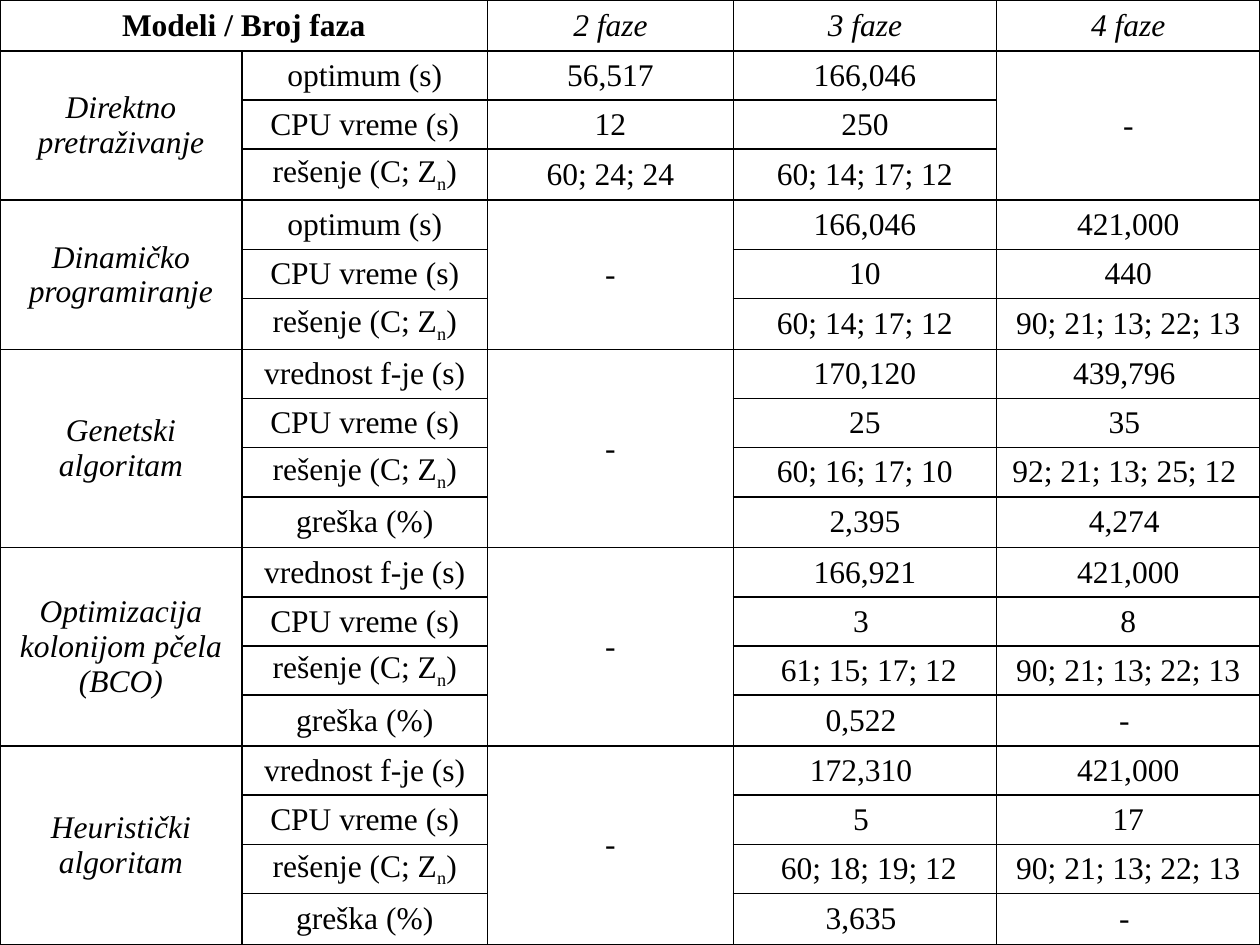
from dataclasses import dataclass

from lxml.etree import SubElement
from pptx import Presentation
from pptx.dml.color import RGBColor
from pptx.enum.text import MSO_ANCHOR, PP_ALIGN
from pptx.oxml import parse_xml
from pptx.oxml.ns import nsdecls
from pptx.table import Table, _Cell
from pptx.util import Inches, Pt

BLACK = RGBColor(0, 0, 0)
FONT = "Times New Roman"
WIDTHS = (1.92, 1.95, 1.95, 2.09, 2.09)
LOW = 0.39
SOLVE = "rešenje (C; Z_n_)"
EXACT = ("optimum (s)", "CPU vreme (s)", SOLVE)
ROUGH = ("vrednost f-je (s)", "CPU vreme (s)", SOLVE, "greška (%)")
NONE = ("-",)


@dataclass
class Model:
    name: str
    labels: tuple[str, ...]
    two: tuple[str, ...]
    three: tuple[str, ...]
    four: tuple[str, ...]


MODELS = (
    Model("Direktno pretraživanje", EXACT,
          ("56,517", "12", "60; 24; 24"),
          ("166,046", "250", "60; 14; 17; 12"), NONE),
    Model("Dinamičko programiranje", EXACT, NONE,
          ("166,046", "10", "60; 14; 17; 12"),
          ("421,000", "440", "90; 21; 13; 22; 13")),
    Model("Genetski algoritam", ROUGH, NONE,
          ("170,120", "25", "60; 16; 17; 10", "2,395"),
          ("439,796 ", "35 ", "92; 21; 13; 25; 12 ", "4,274 ")),
    Model("Optimizacija kolonijom pčela (BCO)", ROUGH, NONE,
          ("166,921", "3 ", " 61; 15; 17; 12", "0,522 "),
          ("421,000", "8", "90; 21; 13; 22; 13", "- ")),
    Model("Heuristički algoritam", ROUGH, NONE,
          ("172,310 ", "5 ", " 60; 18; 19; 12", "3,635 "),
          ("421,000", "17", "90; 21; 13; 22; 13", "- ")),
)


def frame(cell: _Cell) -> None:
    cell.margin_left = cell.margin_right = Inches(0.07)
    cell.margin_top = cell.margin_bottom = 0
    cell.vertical_anchor = MSO_ANCHOR.MIDDLE
    cell.fill.background()
    props = cell._tc.get_or_add_tcPr()
    for place, side in enumerate(("lnL", "lnR", "lnT", "lnB")):
        line = parse_xml(f'<a:{side} {nsdecls("a")} w="{Pt(1)}"><a:solidFill/></a:{side}>')
        SubElement(line[0], line[0].tag.replace("solidFill", "srgbClr"), val=str(BLACK))
        props.insert(place, line)


def write(cell: _Cell, text: str, bold: bool = False, italic: bool = False) -> None:
    para = cell.text_frame.paragraphs[0]
    para.alignment = PP_ALIGN.CENTER
    for place, part in enumerate(text.split("_")):
        run = para.add_run()
        run.text = part
        font = run.font
        font.name, font.size = FONT, Pt(18)
        font.bold, font.italic = bold, italic
        font.color.rgb = BLACK
        if place % 2:
            run._r.get_or_add_rPr().set("baseline", "-25000")


def fill_model(table: Table, top: int, model: Model) -> int:
    last = top + len(model.labels) - 1
    columns = ((model.name,), model.labels, model.two, model.three, model.four)
    for col, texts in enumerate(columns):
        if len(texts) == 1:
            table.cell(top, col).merge(table.cell(last, col))
        for step, text in enumerate(texts):
            write(table.cell(top + step, col), text, italic=col == 0)
    return last


def main() -> None:
    deck = Presentation()
    deck.slide_width, deck.slide_height = Inches(10), Inches(7.5)
    slide = deck.slides.add_slide(deck.slide_layouts[6])
    count = 1 + sum(len(model.labels) for model in MODELS)
    table = slide.shapes.add_table(
        count, len(WIDTHS), 0, 0, deck.slide_width, deck.slide_height).table
    table.first_row = table.horz_banding = False
    for column, width in zip(table.columns, WIDTHS):
        column.width = Inches(width)
    for cell in table.iter_cells():
        frame(cell)

    table.cell(0, 0).merge(table.cell(0, 1))
    write(table.cell(0, 0), "Modeli / Broj faza", bold=True)
    for col in (2, 3, 4):
        write(table.cell(0, col), f"{col} faze", italic=True)
    ends = [0]
    for model in MODELS:
        ends.append(fill_model(table, ends[-1] + 1, model))

    high = (7.5 - LOW * (count - len(ends))) / len(ends)
    for place, row in enumerate(table.rows):
        row.height = Inches(high if place in ends else LOW)
    deck.save("out.pptx")


if __name__ == "__main__":
    main()
